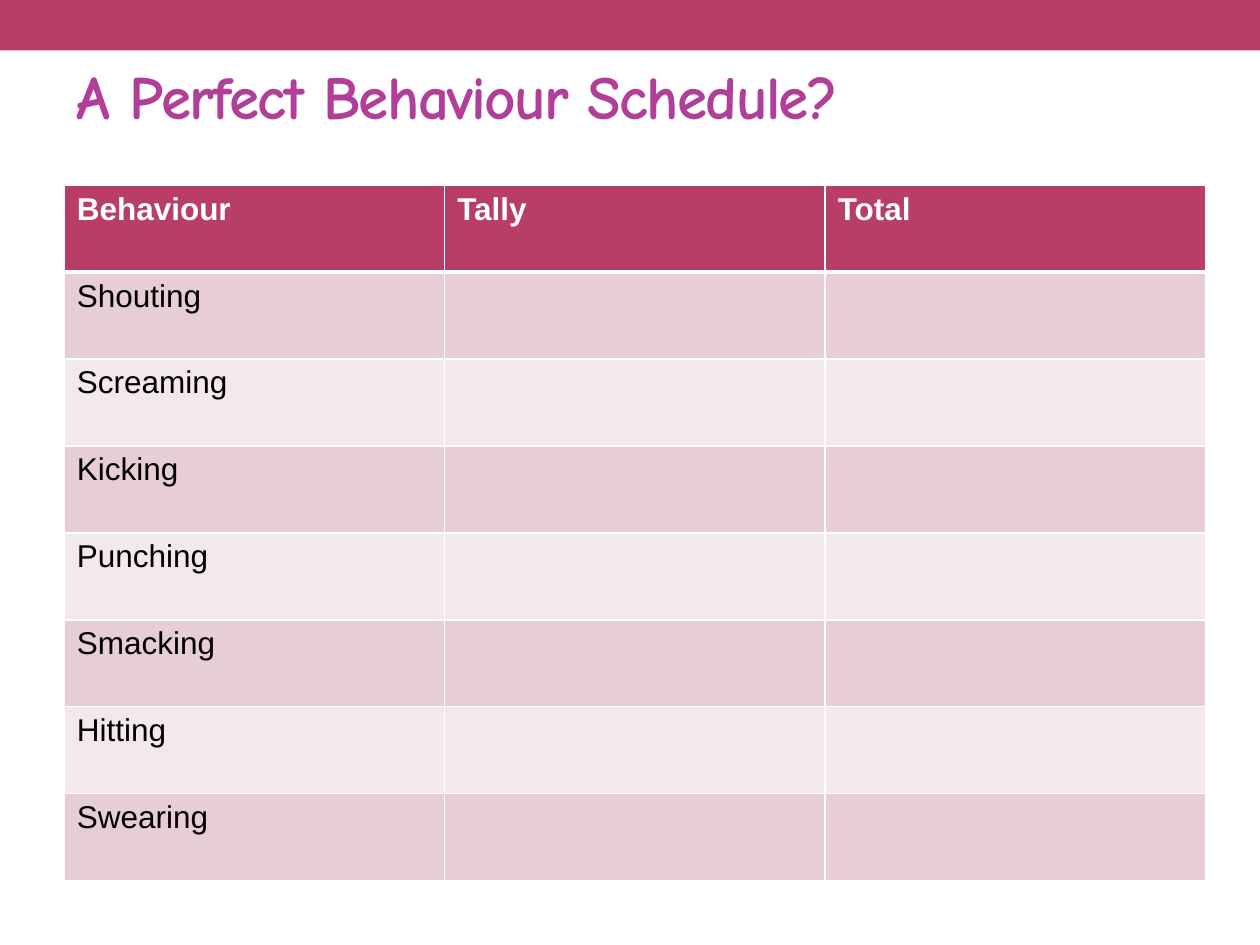
from dataclasses import dataclass

from lxml.etree import SubElement
from pptx import Presentation
from pptx.dml.color import RGBColor
from pptx.enum.shapes import MSO_SHAPE
from pptx.enum.text import MSO_ANCHOR, MSO_AUTO_SIZE, PP_ALIGN
from pptx.oxml import parse_xml
from pptx.oxml.ns import nsdecls
from pptx.util import Inches, Pt

TITLE = "A Perfect Behaviour Schedule?"
HEADINGS = ["Behaviour", "Tally", "Total"]
BEHAVIOURS = ["Shouting", "Screaming", "Kicking", "Punching",
              "Smacking", "Hitting", "Swearing"]


@dataclass(frozen=True)
class Theme:
    accent: str = "B83D68"
    title: str = "B13F9A"
    bands: tuple = ("E6CED4", "F3E8EB")
    light: str = "FFFFFF"
    dark: str = "000000"
    title_font: str = "Comic Neue"
    body_font: str = "Arial"
    title_size: int = 35
    body_size: int = 18
    title_spacing: int = -100
    thin_rule: int = 1
    heading_rule: int = 3


THEME = Theme()
SLIDE_WIDTH, SLIDE_HEIGHT = Inches(10), Inches(7.5)
MARGIN = Inches(0.51)
BANNER_HEIGHT = Inches(0.4)
TITLE_TOP, TITLE_WIDTH, TITLE_HEIGHT = Inches(0.13), Inches(9), Inches(1.25)
TABLE_TOP = Inches(1.47)
COLUMN_WIDTH, ROW_HEIGHT = Inches(3.02), Inches(0.69)


def paint(fill, color):
    fill.solid()
    fill.fore_color.rgb = RGBColor.from_string(color)


def write(paragraph, text, font_name, size, color, bold):
    run = paragraph.add_run()
    run.text = text
    run.font.name = font_name
    run.font.size = Pt(size)
    run.font.bold = bold
    run.font.color.rgb = RGBColor.from_string(color)
    return run


def rule_cell(cell, top, bottom):
    properties = cell._tc.get_or_add_tcPr()
    widths = {"L": THEME.thin_rule, "R": THEME.thin_rule, "T": top, "B": bottom}
    for position, (side, width) in enumerate(widths.items()):
        properties.insert(position, parse_xml(
            f'<a:ln{side} {nsdecls("a")} w="{Pt(width)}"><a:solidFill>'
            f'<a:srgbClr val="{THEME.light}"/></a:solidFill></a:ln{side}>'))


def add_banner(slide):
    banner = slide.shapes.add_shape(
        MSO_SHAPE.RECTANGLE, 0, 0, SLIDE_WIDTH, BANNER_HEIGHT)
    banner.shadow.inherit = False
    paint(banner.fill, THEME.accent)
    banner.line.fill.background()
    banner.element.getparent().insert(2, banner.element)


def add_title(slide):
    title = slide.shapes.title
    title.left, title.top = MARGIN, TITLE_TOP
    title.width, title.height = TITLE_WIDTH, TITLE_HEIGHT
    frame = title.text_frame
    frame.word_wrap = True
    frame.auto_size = MSO_AUTO_SIZE.NONE
    frame.vertical_anchor = MSO_ANCHOR.MIDDLE
    heading = frame.paragraphs[0]
    heading.alignment = PP_ALIGN.LEFT
    run = write(heading, TITLE, THEME.title_font, THEME.title_size,
                THEME.title, True)
    run.font._element.set("spc", str(THEME.title_spacing))


def add_schedule(slide):
    rows = [HEADINGS] + [[behaviour, "", ""] for behaviour in BEHAVIOURS]
    schedule = slide.shapes.add_table(
        len(rows), len(HEADINGS), MARGIN, TABLE_TOP,
        COLUMN_WIDTH * len(HEADINGS), ROW_HEIGHT * len(rows)).table
    for column in schedule.columns:
        column.width = COLUMN_WIDTH
    for index, texts in enumerate(rows):
        schedule.rows[index].height = ROW_HEIGHT
        is_heading = index == 0
        background = THEME.accent if is_heading else THEME.bands[(index - 1) % 2]
        color = THEME.light if is_heading else THEME.dark
        top = THEME.heading_rule if index == 1 else THEME.thin_rule
        bottom = THEME.heading_rule if is_heading else THEME.thin_rule
        for cell, text in zip(schedule.rows[index].cells, texts):
            paint(cell.fill, background)
            rule_cell(cell, top, bottom)
            if text:
                write(cell.text_frame.paragraphs[0], text, THEME.body_font,
                      THEME.body_size, color, is_heading)


def main():
    deck = Presentation()
    deck.slide_width, deck.slide_height = SLIDE_WIDTH, SLIDE_HEIGHT
    slide = deck.slides.add_slide(deck.slide_layouts.get_by_name("Title Only"))
    paint(slide.background.fill, THEME.light)
    add_banner(slide)
    add_title(slide)
    add_schedule(slide)
    deck.save("out.pptx")


if __name__ == "__main__":
    main()
